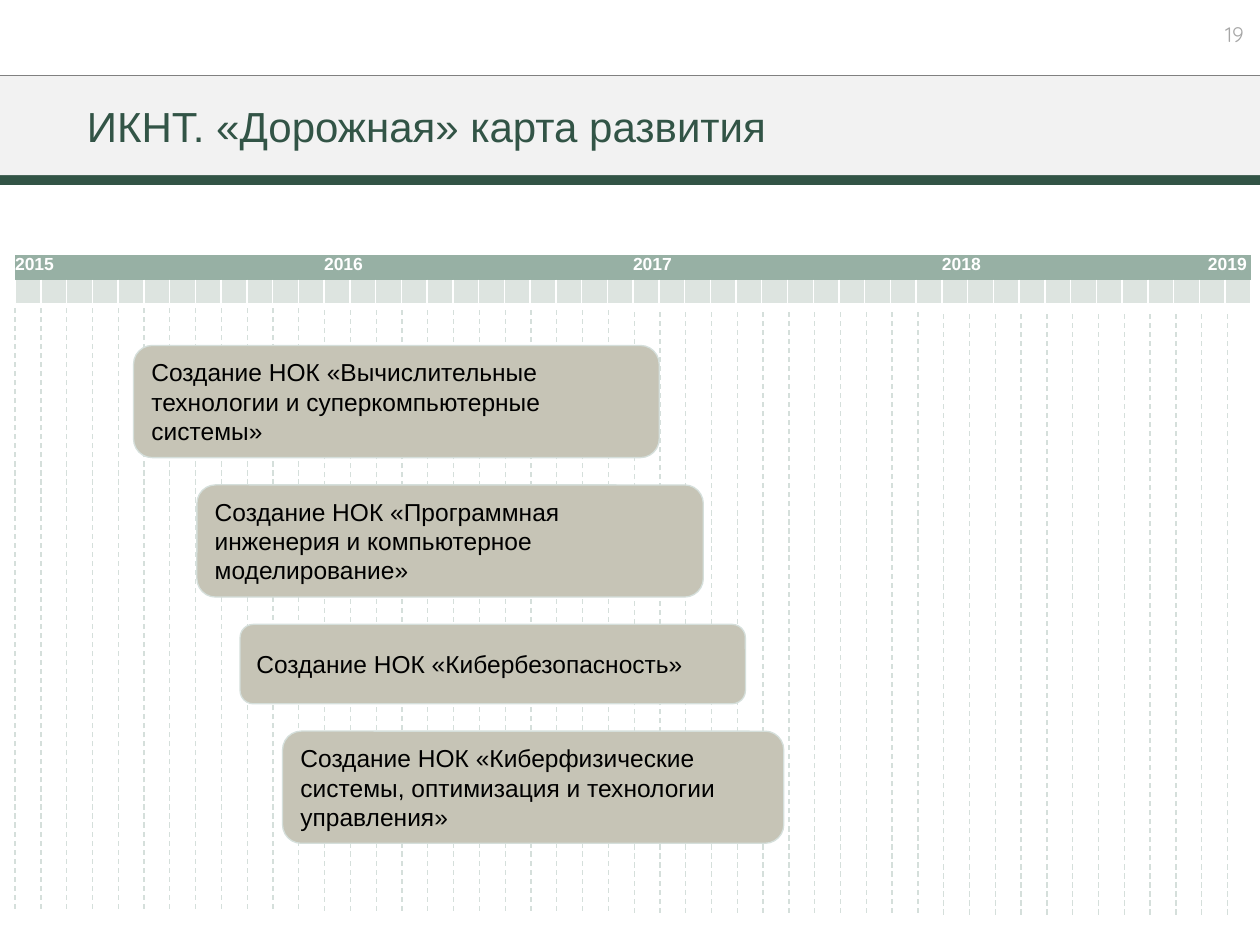
import lxml.etree
import pptx
import pptx.dml.color
import pptx.enum.dml
import pptx.enum.shapes
import pptx.enum.text
import pptx.oxml.ns
import pptx.util

Pt = pptx.util.Pt
qn = pptx.oxml.ns.qn
SHAPE = pptx.enum.shapes.MSO_SHAPE
ALIGN = pptx.enum.text.PP_ALIGN
ANCHOR = pptx.enum.text.MSO_ANCHOR

WIDTH, HEIGHT = 720, 540
LEFT, TOP, ROW = 8.64, 145.7, 14.04
MONTH, MONTHS = 14.74, 12
YEARS = ["2015", "2016", "2017", "2018\t2019"]
GREEN, SAGE, PALE, MIST = "325446", "97B0A4", "DDE4E0", "D5DFDB"
NO_STYLE = "{2D5ABB26-0587-4C30-8999-92F81FD0307C}"

STAGES = [
    ("Создание НОК «Вычислительные технологии и суперкомпьютерные системы»",
     76.3, 300.4, 64.1, ANCHOR.TOP),
    ("Создание НОК «Программная инженерия и компьютерное моделирование»",
     112.5, 289.4, 64.1, ANCHOR.TOP),
    ("Создание НОК «Кибербезопасность»",
     137.2, 288.8, 45.4, ANCHOR.MIDDLE),
    ("Создание НОК «Киберфизические системы, оптимизация и технологии управления»",
     161.5, 286.4, 64.1, ANCHOR.MIDDLE),
]


def rgb(value):
    return pptx.dml.color.RGBColor.from_string(value)


def write(tf, text, size=14, color="000000", font="Arial", bold=False,
          align=ALIGN.LEFT, tab=None):
    p = tf.paragraphs[0]
    p.alignment = align
    if tab:
        tabs = lxml.etree.SubElement(p._p.get_or_add_pPr(), qn("a:tabLst"))
        lxml.etree.SubElement(tabs, qn("a:tab"), pos=str(Pt(tab)), algn="l")
    r = p.add_run()
    r.text = text
    r.font.size = Pt(size)
    r.font.name = font
    r.font.bold = bold
    r.font.color.rgb = rgb(color)


class Roadmap:
    def __init__(self, slide):
        self.s = slide

    def line(self, x1, y1, x2, y2, color, dash=None):
        sp = self.s.shapes.add_connector(
            pptx.enum.shapes.MSO_CONNECTOR.STRAIGHT, Pt(x1), Pt(y1), Pt(x2), Pt(y2))
        sp.line.color.rgb = rgb(color)
        sp.line.width = Pt(0.75)
        if dash:
            sp.line.dash_style = dash
        lxml.etree.SubElement(sp._element.spPr, qn("a:effectLst"))

    def box(self, x, y, w, h, fill, kind=SHAPE.RECTANGLE, line=None, anchor=ANCHOR.MIDDLE):
        sp = self.s.shapes.add_shape(kind, Pt(x), Pt(y), Pt(w), Pt(h))
        sp.shadow.inherit = False
        sp.fill.solid()
        sp.fill.fore_color.rgb = rgb(fill)
        if line:
            sp.line.color.rgb = rgb(line)
            sp.line.width = Pt(0.75)
        else:
            sp.line.fill.background()
        tf = sp.text_frame
        tf.word_wrap = True
        tf.vertical_anchor = anchor
        return tf

    def label(self, x, y, w, h, text, **style):
        tf = self.s.shapes.add_textbox(Pt(x), Pt(y), Pt(w), Pt(h)).text_frame
        tf.word_wrap = True
        tf.vertical_anchor = ANCHOR.BOTTOM
        write(tf, text, **style)

    def cell(self, cell, fill):
        cell.fill.solid()
        cell.fill.fore_color.rgb = rgb(fill)
        cell.margin_left = cell.margin_right = cell.margin_top = cell.margin_bottom = 0

    def month(self, cell):
        self.cell(cell, PALE)
        lxml.etree.SubElement(cell.text_frame.paragraphs[0]._p, qn("a:endParaRPr"), sz="800")
        tcPr = cell._tc.get_or_add_tcPr()
        for i, side in enumerate(("a:lnL", "a:lnR", "a:lnB")):
            ln = lxml.etree.Element(qn(side), w=str(Pt(1)))
            solid = lxml.etree.SubElement(ln, qn("a:solidFill"))
            lxml.etree.SubElement(solid, qn("a:srgbClr"), val="FFFFFF")
            tcPr.insert(i, ln)

    def calendar(self):
        count = len(YEARS) * MONTHS
        table = self.s.shapes.add_table(
            2, count, Pt(LEFT), Pt(TOP), Pt(count * MONTH), Pt(2 * ROW)).table
        table._tbl.tblPr.find(qn("a:tableStyleId")).text = NO_STYLE
        table.first_row = table.horz_banding = False
        for row in table.rows:
            row.height = Pt(ROW)
        for i, column in enumerate(table.columns):
            column.width = Pt(MONTH)
            self.month(table.cell(1, i))
        for i, year in enumerate(YEARS):
            cell = table.cell(0, i * MONTHS)
            cell.merge(table.cell(0, (i + 1) * MONTHS - 1))
            self.cell(cell, SAGE)
            write(cell.text_frame, year, size=10, color="FFFFFF", bold=True,
                  tab=152 if "\t" in year else None)

    def grid(self):
        for i in range(len(YEARS) * MONTHS):
            x = LEFT + i * MONTH
            y = TOP + 2 * ROW + i // MONTHS * 1.1
            self.line(x, y + 345.6, x, y, MIST, pptx.enum.dml.MSO_LINE.DASH)

    def stages(self, y=197.4, gap=15.6):
        for text, x, w, h, anchor in STAGES:
            tf = self.box(x, y, w, h, "C6C4B6", SHAPE.ROUNDED_RECTANGLE, MIST, anchor)
            write(tf, text)
            y += h + gap


def main():
    prs = pptx.Presentation()
    prs.slide_width, prs.slide_height = Pt(WIDTH), Pt(HEIGHT)
    roadmap = Roadmap(prs.slides.add_slide(prs.slide_layouts[6]))
    roadmap.label(666, 3.6, 51.8, 26.6, "19", size=12, color="A6A6A6",
                  font="Quicksand", align=ALIGN.RIGHT)
    roadmap.box(0, 100.1, WIDTH, 5.6, GREEN)
    roadmap.grid()
    title = roadmap.box(0, 43.2, WIDTH, 56.9, "F2F2F2")
    title.margin_left = Pt(49.7)
    write(title, "ИКНТ. «Дорожная» карта развития", size=24, color=GREEN)
    roadmap.line(0, 43.2, WIDTH, 43.2, "808080")
    roadmap.calendar()
    roadmap.stages()
    prs.save("out.pptx")


if __name__ == "__main__":
    main()
